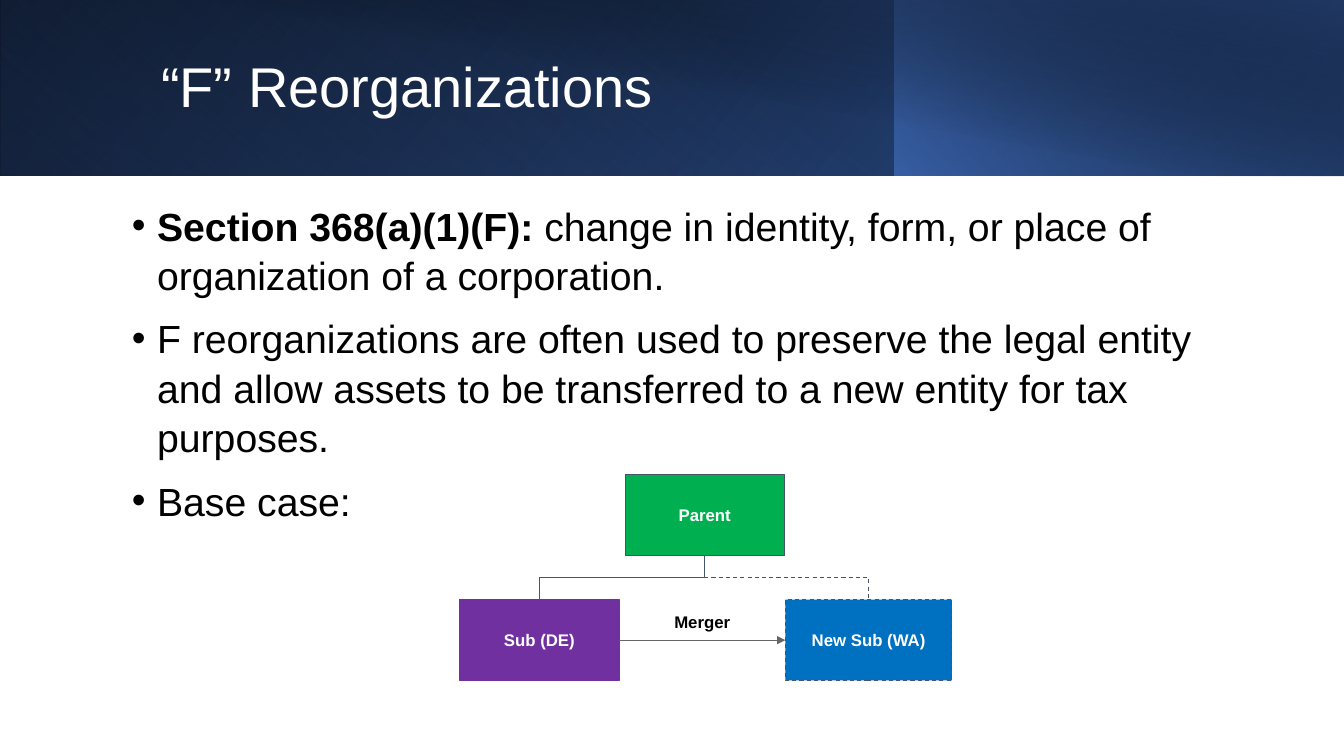
"""Build the slide on F reorganizations with its merger diagram."""
from dataclasses import dataclass

from lxml import etree
from pptx import Presentation, util as u
from pptx.dml.color import RGBColor
from pptx.enum import dml, shapes, text
from pptx.oxml import parse_xml
from pptx.oxml.ns import nsdecls, qn

PX = 9144


@dataclass(frozen=True)
class Theme:
    """Hold the colours, font and type sizes."""
    font: str = "Arial"
    title: int = 40
    body: int = 28
    label: int = 12
    white: str = "FFFFFF"
    black: str = "000000"
    navy: str = "203864"
    blue: str = "4472C4"
    deep_blue: str = "2F5597"
    slate: str = "44546A"
    grey: str = "666666"
    parent: str = "00B050"
    sub: str = "7030A0"
    new_sub: str = "0070C0"


THEME = Theme()


def px(*lengths):
    """Turn px lengths into EMU."""
    return [u.Emu(length * PX) for length in lengths]


def apply(target, values):
    """Set each attribute of target from a dict."""
    for name, value in values.items():
        setattr(target, name, value)


def add_run(paragraph, words, size, color, bold=False):
    """Append a styled run."""
    run = paragraph.add_run()
    run.text = words
    apply(run.font, {"name": THEME.font, "size": u.Pt(size), "bold": bold})
    run.font.color.rgb = RGBColor.from_string(color)


def add_text(slide, box, **frame_values):
    """Add a wrapping text box and return its frame."""
    frame = slide.shapes.add_textbox(*px(*box)).text_frame
    apply(frame, {"word_wrap": True, **frame_values})
    return frame


def style_line(line, color, dashed=False):
    """Give a line its colour, width and dash."""
    line.color.rgb = RGBColor.from_string(color)
    line.width = u.Pt(0.75)
    if dashed:
        line.dash_style = dml.MSO_LINE.DASH


def add_band(slide, box, stops, angle, flip=True, rotation=0):
    """Add a header rectangle with a gradient of (position, colour, opacity)."""
    band = slide.shapes.add_shape(shapes.MSO_SHAPE.RECTANGLE, *px(*box))
    band.shadow.inherit = False
    band.line.fill.background()
    band.rotation = rotation
    properties = band._element.spPr
    if flip:
        properties.xfrm.set("flipH", "1")
    marks = "".join(
        f'<a:gs pos="{position * 1000}"><a:srgbClr val="{color}">'
        f'<a:alpha val="{opacity * 1000}"/></a:srgbClr></a:gs>'
        for position, color, opacity in stops)
    gradient = parse_xml(
        f'<a:gradFill {nsdecls("a")} rotWithShape="1"><a:gsLst>{marks}</a:gsLst>'
        f'<a:lin ang="{angle * 60000}" scaled="0"/></a:gradFill>')
    properties.find(qn("a:prstGeom")).addnext(gradient)


def add_bullet(paragraph, parts):
    """Fill a bulleted paragraph with (words, bold) parts."""
    apply(paragraph, {"space_before": u.Pt(10), "line_spacing": 1.05})
    properties = paragraph._p.get_or_add_pPr()
    indent = 25 * PX
    properties.set("marL", str(indent))
    properties.set("indent", str(-indent))
    etree.SubElement(properties, qn("a:buFont")).set("typeface", THEME.font)
    etree.SubElement(properties, qn("a:buChar")).set("char", "•")
    for words, bold in parts:
        add_run(paragraph, words, THEME.body, THEME.black, bold)


def add_entity(slide, name, box, fill, outline, dashed=False):
    """Add a labelled company box."""
    entity = slide.shapes.add_shape(shapes.MSO_SHAPE.RECTANGLE, *px(*box))
    entity.shadow.inherit = False
    entity.fill.solid()
    entity.fill.fore_color.rgb = RGBColor.from_string(fill)
    style_line(entity.line, outline, dashed)
    frame = entity.text_frame
    apply(frame, {"word_wrap": True, "vertical_anchor": text.MSO_ANCHOR.MIDDLE})
    paragraph = frame.paragraphs[0]
    paragraph.alignment = text.PP_ALIGN.CENTER
    add_run(paragraph, name, THEME.label, THEME.white, True)
    return entity


def add_link(slide, kind, start, end, color, dashed=False):
    """Connect two (entity, site) ends with a plain connector."""
    link = slide.shapes.add_connector(kind, 0, 0, 0, 0)
    link.begin_connect(*start)
    link.end_connect(*end)
    style_line(link.line, color, dashed)
    etree.SubElement(link._element.spPr, qn("a:effectLst"))
    return link


def add_ownership(slide, owner, owned, dashed=False):
    """Draw an elbow from the owner's bottom to the owned entity's top."""
    link = add_link(slide, shapes.MSO_CONNECTOR.ELBOW, (owner, 2), (owned, 0),
                    THEME.slate, dashed)
    drop, span = link.height, link.width
    center_x = link.left + span // 2
    center_y = link.top + drop // 2
    rightward = link.end_x > link.begin_x
    apply(link, {"left": center_x - drop // 2, "top": center_y - span // 2,
                 "width": drop, "height": span})
    apply(link._element.spPr.xfrm,
          {"rot": 270 if rightward else 90, "flipH": rightward})


def add_merger(slide, source, target):
    """Draw the merger arrow and its label."""
    frame = add_text(slide, (624, 597, 145, 75), margin_top=u.Inches(0.1))
    paragraph = frame.paragraphs[0]
    paragraph.alignment = text.PP_ALIGN.CENTER
    add_run(paragraph, "Merger", THEME.label, THEME.black, True)
    arrow = add_link(slide, shapes.MSO_CONNECTOR.STRAIGHT, (source, 3),
                     (target, 1), THEME.grey)
    etree.SubElement(arrow.line._get_or_add_ln(), qn("a:tailEnd")).set("type", "triangle")


def add_header(slide):
    """Add the layered header bands and the title."""
    add_band(slide, (0, 0, 1333, 174),
             [(0, THEME.black, 100), (100, THEME.deep_blue, 100)], 140)
    add_band(slide, (0, 0, 888, 174),
             [(20, THEME.blue, 0), (100, THEME.navy, 55)], 230, rotation=180)
    add_band(slide, (887, 0, 446, 174),
             [(0, THEME.blue, 66), (100, THEME.black, 30)], 220)
    add_band(slide, (50, 0, 1283, 175),
             [(50, THEME.black, 0), (99, THEME.navy, 52)], 280, flip=False)
    title = add_text(slide, (150, 32, 1082, 113),
                     vertical_anchor=text.MSO_ANCHOR.MIDDLE).paragraphs[0]
    title.line_spacing = 0.9
    add_run(title, "“F” Reorganizations", THEME.title, THEME.white)


def add_points(slide):
    """Add the bulleted points."""
    points = [
        [("Section 368(a)(1)(F): ", True),
         ("change in identity, form, or place of organization of a corporation.", False)],
        [("F reorganizations are often used to preserve the legal entity and allow "
          "assets to be transferred to a new entity for tax purposes.", False)],
        [("Base case:", False)],
    ]
    frame = add_text(slide, (121, 193, 1092, 557))
    for index, parts in enumerate(points):
        add_bullet(frame.add_paragraph() if index else frame.paragraphs[0], parts)


def add_diagram(slide):
    """Add the base case diagram."""
    parent = add_entity(slide, "Parent", (620, 471, 158, 80), THEME.parent, THEME.slate)
    sub = add_entity(slide, "Sub (DE)", (456, 595, 158, 80), THEME.sub, THEME.sub)
    new_sub = add_entity(slide, "New Sub (WA)", (779, 595, 165, 80),
                         THEME.new_sub, THEME.slate, True)
    add_ownership(slide, parent, sub)
    add_ownership(slide, parent, new_sub, True)
    add_merger(slide, sub, new_sub)


def main():
    """Build and save the presentation."""
    presentation = Presentation()
    width, height = px(1333, 750)
    apply(presentation, {"slide_width": width, "slide_height": height})
    slide = presentation.slides.add_slide(presentation.slide_layouts[6])
    add_header(slide)
    add_points(slide)
    add_diagram(slide)
    presentation.save("out.pptx")


if __name__ == "__main__":
    main()
